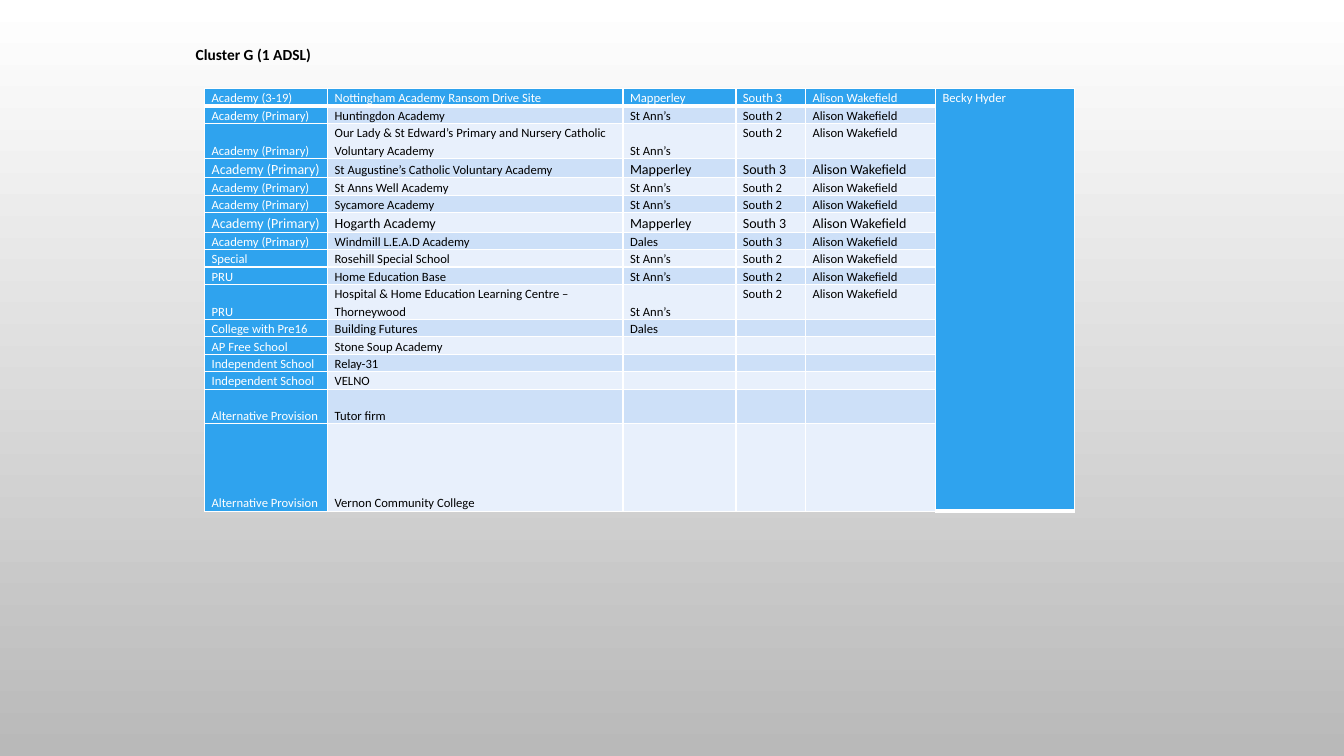
"""Build the Cluster G slide with its table of schools and staff."""
import pptx
import pptx.dml.color
import pptx.enum.text
import pptx.oxml
import pptx.oxml.ns
import pptx.util
from pptx.util import Inches, Pt

TITLE = "Cluster G (1 ADSL)"
OFFICER = "Alison Wakefield"
CLUSTER_LEAD = "Becky Hyder"
SCHOOLS = [
    ("Academy (3-19)", "Nottingham Academy Ransom Drive Site", "Mapperley", "South 3", OFFICER),
    ("Academy (Primary)", "Huntingdon Academy", "St Ann’s", "South 2", OFFICER),
    ("Academy (Primary)", "Our Lady & St Edward’s Primary and Nursery Catholic Voluntary Academy",
     "St Ann’s", "South 2", OFFICER),
    ("Academy (Primary)", "St Augustine’s Catholic Voluntary Academy", "Mapperley", "South 3", OFFICER),
    ("Academy (Primary)", "St Anns Well Academy", "St Ann’s", "South 2", OFFICER),
    ("Academy (Primary)", "Sycamore Academy", "St Ann’s", "South 2", OFFICER),
    ("Academy (Primary)", "Hogarth Academy", "Mapperley", "South 3", OFFICER),
    ("Academy (Primary)", "Windmill L.E.A.D Academy", "Dales", "South 3", OFFICER),
    ("Special", "Rosehill Special School", "St Ann’s", "South 2", OFFICER),
    ("PRU", "Home Education Base", "St Ann’s", "South 2", OFFICER),
    ("PRU", "Hospital & Home Education Learning Centre – Thorneywood", "St Ann’s", "South 2", OFFICER),
    ("College with Pre16", "Building Futures", "Dales", "", ""),
    ("AP Free School", "Stone Soup Academy", "", "", ""),
    ("Independent School", "Relay-31", "", "", ""),
    ("Independent School", "VELNO", "", "", ""),
    ("Alternative Provision", "Tutor firm", "", "", ""),
    ("Alternative Provision", "Vernon Community College", "", "", ""),
]
COLUMN_WIDTHS = [1.22, 2.93, 1.12, 0.69, 1.29, 1.38]
ROW_HEIGHT = 0.17
TALL_ROWS = {2: 0.34, 3: 0.18, 6: 0.18, 10: 0.34, 15: 0.34, 16: 0.87}
LARGE_TEXT_ROWS = {3, 6}
SMALL_TEXT_CELLS = {(3, 1)}
BLUE, BAND_DARK, BAND_LIGHT = "2FA3EE", "CDE0F8", "E8F0FC"
WHITE, BLACK = "FFFFFF", "000000"


def color(value):
    return pptx.dml.color.RGBColor.from_string(value)


def add_borders(cell, bottom_width):
    properties = cell._tc.get_or_add_tcPr()
    widths = [("lnL", 1), ("lnR", 1), ("lnT", 1), ("lnB", bottom_width)]
    for index, (side, width) in enumerate(widths):
        properties.insert(index, pptx.oxml.parse_xml(
            f'<a:{side} {pptx.oxml.ns.nsdecls("a")} w="{Pt(width)}"><a:solidFill>'
            f'<a:srgbClr val="{WHITE}"/></a:solidFill></a:{side}>'))


def format_cell(cell, text, row, column):
    is_blue = row == 0 or column in (0, 5)
    cell.fill.solid()
    cell.fill.fore_color.rgb = color(BLUE if is_blue else BAND_DARK if row % 2 else BAND_LIGHT)
    cell.margin_left = cell.margin_right = Inches(0.07)
    cell.margin_top = cell.margin_bottom = 0
    anchor = pptx.enum.text.MSO_ANCHOR
    cell.vertical_anchor = anchor.BOTTOM if column < 3 else anchor.TOP
    cell.text = text
    paragraph = cell.text_frame.paragraphs[0]
    paragraph.line_spacing = 1.15
    is_large = row in LARGE_TEXT_ROWS and (row, column) not in SMALL_TEXT_CELLS
    size = 10 if is_large else 9
    paragraph.font.name = "Calibri"
    paragraph.font.size = Pt(size)
    paragraph.font.color.rgb = color(WHITE if is_blue else BLACK)
    if not text:
        paragraph._p.get_or_add_endParaRPr().set("sz", str(size * 100))
    add_borders(cell, 3 if row == 0 else 1)


def add_school_table(slide):
    frame = slide.shapes.add_table(len(SCHOOLS), len(COLUMN_WIDTHS), Inches(2.03), Inches(0.88),
                                   Inches(sum(COLUMN_WIDTHS)), Inches(ROW_HEIGHT * len(SCHOOLS)))
    table = frame.table
    for column, width in zip(table.columns, COLUMN_WIDTHS):
        column.width = Inches(width)
    for row, school in enumerate(SCHOOLS):
        table.rows[row].height = Inches(TALL_ROWS.get(row, ROW_HEIGHT))
        lead = CLUSTER_LEAD if row == 0 else ""
        for column, text in enumerate((*school, lead)):
            format_cell(table.cell(row, column), text, row, column)
    last_column = len(COLUMN_WIDTHS) - 1
    table.cell(0, last_column).merge(table.cell(len(SCHOOLS) - 1, last_column))


def add_title(slide):
    title = slide.shapes.title
    title.left, title.top, title.width, title.height = map(Inches, (1.84, 0.39, 1.36, 0.29))
    text_frame = title.text_frame
    text_frame.text = TITLE
    text_frame.word_wrap = False
    text_frame.auto_size = pptx.enum.text.MSO_AUTO_SIZE.SHAPE_TO_FIT_TEXT
    text_frame.vertical_anchor = pptx.enum.text.MSO_ANCHOR.MIDDLE
    paragraph = text_frame.paragraphs[0]
    paragraph.alignment = pptx.enum.text.PP_ALIGN.LEFT
    paragraph.font.name = "Calibri"
    paragraph.font.size = Pt(11)
    paragraph.font.bold = True
    paragraph.font.color.rgb = color(BLACK)


def main():
    presentation = pptx.Presentation()
    presentation.slide_width, presentation.slide_height = Inches(13.33), Inches(7.5)
    slide = presentation.slides.add_slide(presentation.slide_layouts[5])
    background = slide.background.fill
    background.gradient()
    background.gradient_angle = 270
    for stop, value in zip(background.gradient_stops, (WHITE, "B9B9B9")):
        stop.color.rgb = color(value)
    add_title(slide)
    add_school_table(slide)
    presentation.save("out.pptx")


if __name__ == "__main__":
    main()
